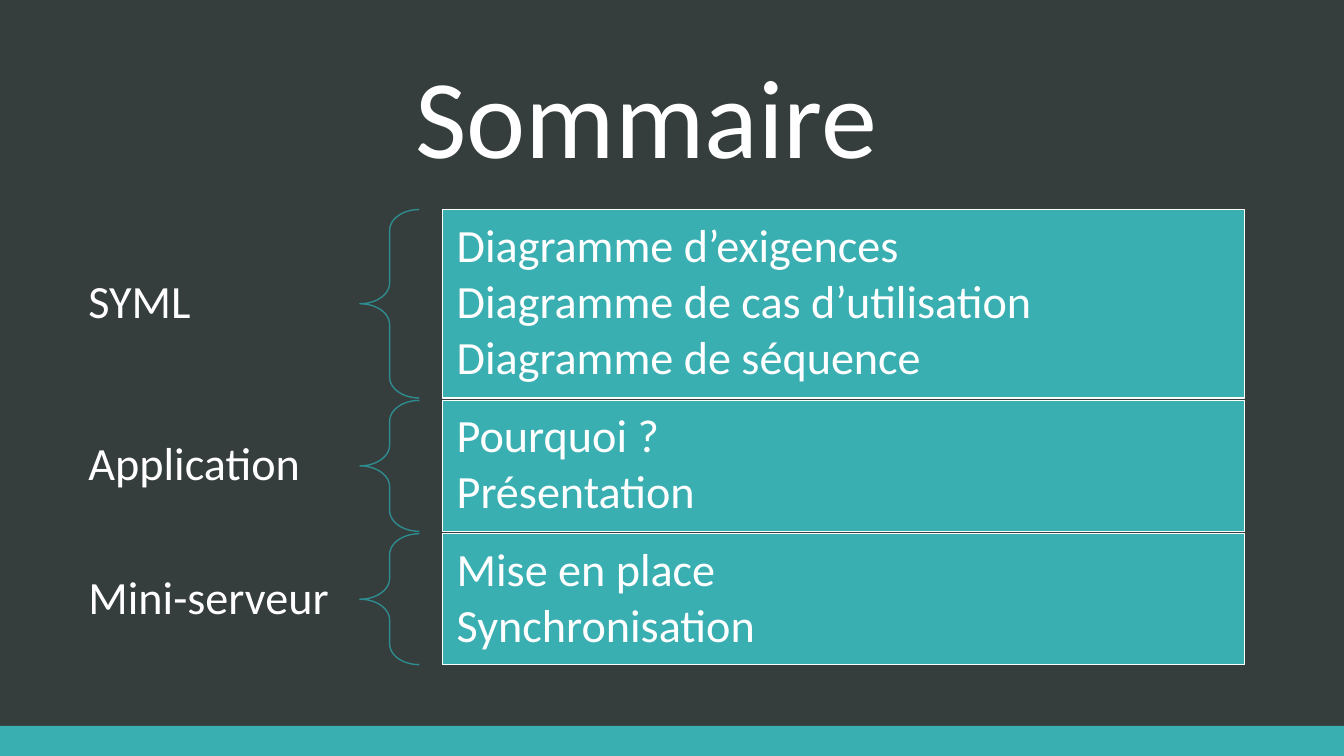
from dataclasses import dataclass

from pptx import Presentation
from pptx.dml.color import RGBColor
from pptx.enum.shapes import MSO_SHAPE as Preset
from pptx.enum.text import MSO_ANCHOR as Anchor, MSO_AUTO_SIZE as AutoSize, PP_ALIGN as Align
from pptx.shapes.autoshape import Shape
from pptx.slide import Slide
from pptx.text.text import TextFrame
from pptx.util import Cm, Pt


@dataclass(frozen=True)
class Theme:
    background: RGBColor = RGBColor(0x36, 0x3D, 0x3D)
    accent: RGBColor = RGBColor(0x3A, 0xAF, 0xB2)
    brace: RGBColor = RGBColor(0x2E, 0x8C, 0x8F)
    text: RGBColor = RGBColor(0xFF, 0xFF, 0xFF)
    font: str = "Calibri"
    title_size: int = 80
    body_size: int = 33


@dataclass(frozen=True)
class Section:
    label: str
    topics: tuple[str, ...]

    @property
    def height(self) -> float:
        return 0.4 + 1.45 * len(self.topics)


THEME = Theme()
SECTIONS = (
    Section("SYML", ("Diagramme d’exigences", "Diagramme de cas d’utilisation",
                     "Diagramme de séquence")),
    Section("Application", ("Pourquoi ?", "Présentation")),
    Section("Mini-serveur", ("Mise en place", "Synchronisation")),
)

# Lengths in centimetres
SLIDE_WIDTH, SLIDE_HEIGHT = 33.87, 19.05
BAND_HEIGHT = 0.76
FIRST_TOP, SECTION_GAP = 5.28, 0.06
LABEL_LEFT, LABEL_WIDTH, LABEL_HEIGHT = 1.57, 7.49, 1.65
BRACE_LEFT, BRACE_WIDTH = 9.07, 1.5
TOPICS_LEFT, TOPICS_WIDTH = 11.15, 20.22


def write(frame: TextFrame, lines: tuple[str, ...], size: int, anchor: Anchor,
          align: Align = Align.LEFT, space_after: float = 0) -> None:
    frame.word_wrap = True
    frame.auto_size = AutoSize.NONE
    frame.vertical_anchor = anchor
    frame.text = "\n".join(lines)
    for paragraph in frame.paragraphs:
        paragraph.alignment = align
        paragraph.line_spacing = 0.9
        paragraph.space_before = Pt(0)
        paragraph.space_after = Pt(space_after)
        paragraph.font.name = THEME.font
        paragraph.font.size = Pt(size)
        paragraph.font.color.rgb = THEME.text


def set_margins(frame: TextFrame, horizontal: float, vertical: float) -> None:
    frame.margin_left = frame.margin_right = Cm(horizontal)
    frame.margin_top = frame.margin_bottom = Cm(vertical)


def add_preset(slide: Slide, preset: Preset, left: float, top: float, width: float, height: float,
               fill: RGBColor | None = None, line: RGBColor | None = None) -> Shape:
    shape = slide.shapes.add_shape(preset, Cm(left), Cm(top), Cm(width), Cm(height))
    shape.shadow.inherit = False
    if fill is None:
        shape.fill.background()
    else:
        shape.fill.solid()
        shape.fill.fore_color.rgb = fill
    if line is None:
        shape.line.fill.background()
    else:
        shape.line.color.rgb = line
        shape.line.width = Pt(1)
    return shape


def add_section(slide: Slide, section: Section, top: float) -> None:
    # Label, centred on the height of its section
    label_top = top + (section.height - LABEL_HEIGHT) / 2
    label = slide.shapes.add_textbox(Cm(LABEL_LEFT), Cm(label_top), Cm(LABEL_WIDTH),
                                     Cm(LABEL_HEIGHT)).text_frame
    set_margins(label, 0.66, 0.23)
    write(label, (section.label,), THEME.body_size, Anchor.MIDDLE)

    # Brace
    brace = add_preset(slide, Preset.LEFT_BRACE, BRACE_LEFT, top, BRACE_WIDTH, section.height,
                       line=THEME.brace)
    brace.adjustments[0] = 0.35

    # Topics
    topics = add_preset(slide, Preset.RECTANGLE, TOPICS_LEFT, top, TOPICS_WIDTH, section.height,
                        THEME.accent, THEME.text).text_frame
    set_margins(topics, 0.36, 0.36)
    write(topics, section.topics, THEME.body_size, Anchor.MIDDLE, space_after=4.5)


def main() -> None:
    deck = Presentation()
    deck.slide_width, deck.slide_height = Cm(SLIDE_WIDTH), Cm(SLIDE_HEIGHT)
    slide = deck.slides.add_slide(deck.slide_layouts.get_by_name("Title Only"))

    # Background and bottom band
    slide.background.fill.solid()
    slide.background.fill.fore_color.rgb = THEME.background
    add_preset(slide, Preset.RECTANGLE, 0, SLIDE_HEIGHT - BAND_HEIGHT, SLIDE_WIDTH, BAND_HEIGHT,
               THEME.accent)

    # Title
    title = slide.shapes.title
    title.left, title.top, title.width, title.height = Cm(2.44), Cm(1.3), Cm(27.71), Cm(3.43)
    write(title.text_frame, ("Sommaire",), THEME.title_size, Anchor.BOTTOM, Align.CENTER)

    # Sections, stacked
    top = FIRST_TOP
    for section in SECTIONS:
        add_section(slide, section, top)
        top += section.height + SECTION_GAP

    deck.save("out.pptx")


if __name__ == "__main__":
    main()
